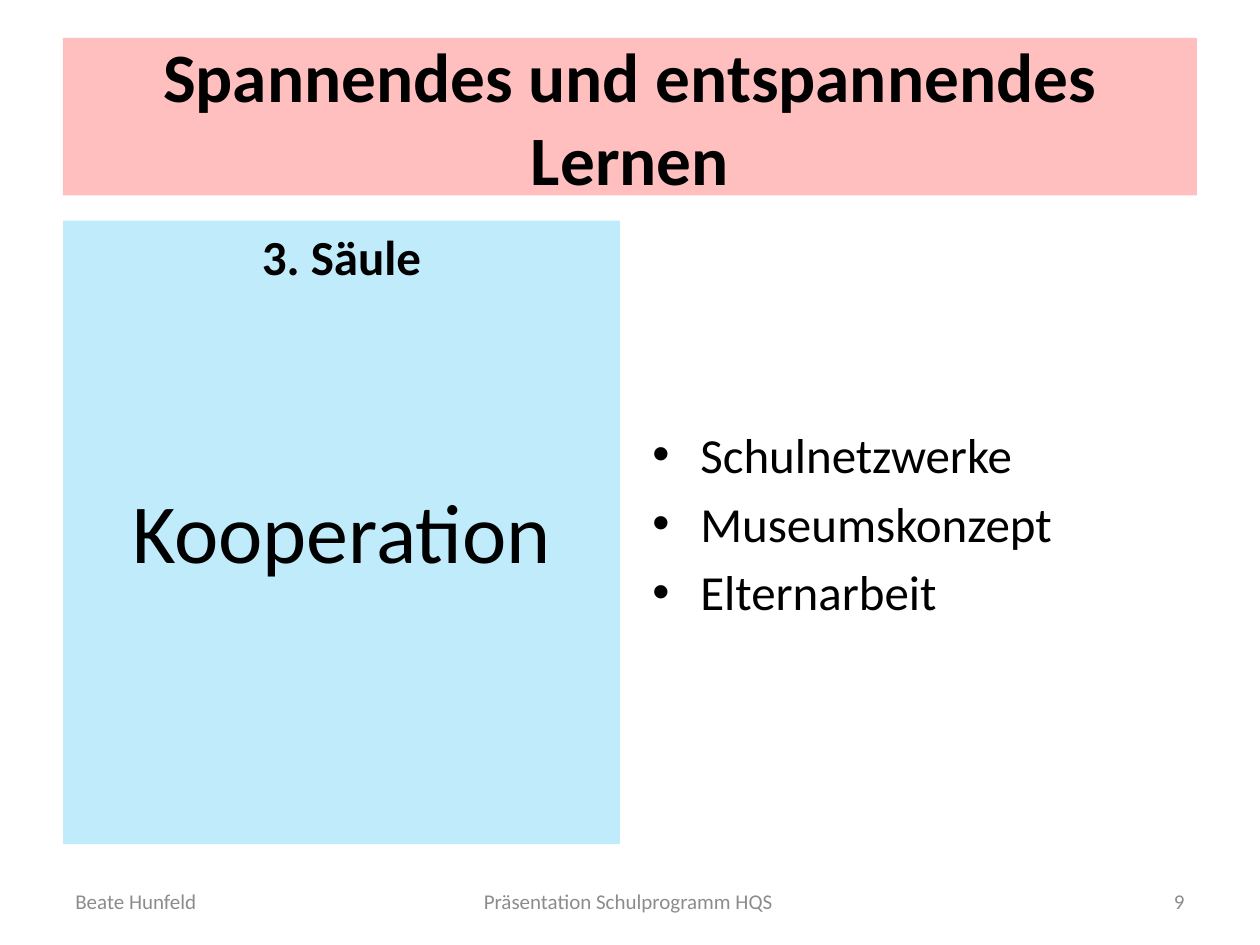
from dataclasses import dataclass
from lxml.etree import SubElement
from pptx import Presentation
from pptx.dml.color import RGBColor
from pptx.enum.shapes import MSO_SHAPE
from pptx.enum.text import MSO_ANCHOR, PP_ALIGN
from pptx.oxml.ns import qn
from pptx.util import Inches, Pt


@dataclass(frozen=True)
class Theme:
    font: str = "Calibri"
    ink: str = "000000"
    gray: str = "8C8C8C"
    red: str = "FF0000"
    blue: str = "00B0F0"
    alpha: int = 25
    title: float = 39.6
    huge: float = 48
    body: float = 28
    small: float = 12


THEME = Theme()
LEFT, WIDE, GAP = 0.5, 9, 0.16
HALF = (WIDE - GAP) / 2
TOP, TALL = 1.75, 4.95


def add_panel(slide, box, color):
    panel = slide.shapes.add_shape(MSO_SHAPE.RECTANGLE, *map(Inches, box))
    panel.shadow.inherit = False
    panel.line.fill.background()
    panel.fill.solid()
    panel.fill.fore_color.rgb = RGBColor.from_string(color)
    tint = panel.fill._xPr.find(qn("a:solidFill"))[0]
    SubElement(tint, qn("a:alpha"), val=str(THEME.alpha * 1000))
    return panel


def add_box(slide, box):
    return slide.shapes.add_textbox(*map(Inches, box))


def set_frame(shape, anchor=MSO_ANCHOR.TOP, top=0.05):
    frame = shape.text_frame
    frame.word_wrap = True
    frame.vertical_anchor = anchor
    frame.margin_top = Inches(top)
    return frame


def add_text(frame, text, size=THEME.body, color=THEME.ink, bold=False,
             align=PP_ALIGN.LEFT, before=0, line=None, bullet=False):
    first = frame.paragraphs[0]
    para = frame.add_paragraph() if first.runs else first
    para.alignment = align
    para.space_before = Pt(before)
    para.line_spacing = line
    run = para.add_run()
    run.text = text
    run.font.name = THEME.font
    run.font.size = Pt(size)
    run.font.bold = bold
    run.font.color.rgb = RGBColor.from_string(color)
    if bullet:
        props = para._p.get_or_add_pPr()
        indent = Inches(0.38)
        props.set("marL", str(indent))
        props.set("indent", str(-indent))
        SubElement(props, qn("a:buFont"), typeface="Arial")
        SubElement(props, qn("a:buChar"), char="•")


def add_title(slide):
    panel = add_panel(slide, (LEFT, 0.3, WIDE, 1.25), THEME.red)
    add_text(set_frame(panel, MSO_ANCHOR.MIDDLE),
             "Spannendes und entspannendes Lernen",
             size=THEME.title, bold=True, align=PP_ALIGN.CENTER)


def add_pillar(slide):
    panel = add_panel(slide, (LEFT, TOP, HALF, TALL), THEME.blue)
    frame = set_frame(panel)
    add_text(frame, "3. Säule", bold=True, align=PP_ALIGN.CENTER)
    add_text(frame, "Kooperation", size=THEME.huge, align=PP_ALIGN.CENTER,
             before=122, line=0.8)


def add_list(slide):
    box = add_box(slide, (LEFT + HALF + GAP, TOP, HALF, TALL))
    frame = set_frame(box, top=1.62)
    for row, item in enumerate(("Schulnetzwerke", "Museumskonzept", "Elternarbeit")):
        add_text(frame, item, before=THEME.body * 0.2 if row else 0, bullet=True)


def add_foot(slide):
    parts = (
        ("Beate Hunfeld", LEFT, 2.33, PP_ALIGN.LEFT),
        ("Präsentation Schulprogramm HQS ", 3.42, 3.17, PP_ALIGN.CENTER),
        ("9", 7.17, 2.33, PP_ALIGN.RIGHT),
    )
    for text, left, width, align in parts:
        box = add_box(slide, (left, 6.95, width, 0.4))
        add_text(set_frame(box, MSO_ANCHOR.MIDDLE), text,
                 size=THEME.small, color=THEME.gray, align=align)


def main():
    deck = Presentation()
    deck.slide_width, deck.slide_height = Inches(10), Inches(7.5)
    slide = deck.slides.add_slide(deck.slide_layouts[6])
    add_title(slide)
    add_pillar(slide)
    add_list(slide)
    add_foot(slide)
    deck.save("out.pptx")


if __name__ == "__main__":
    main()
